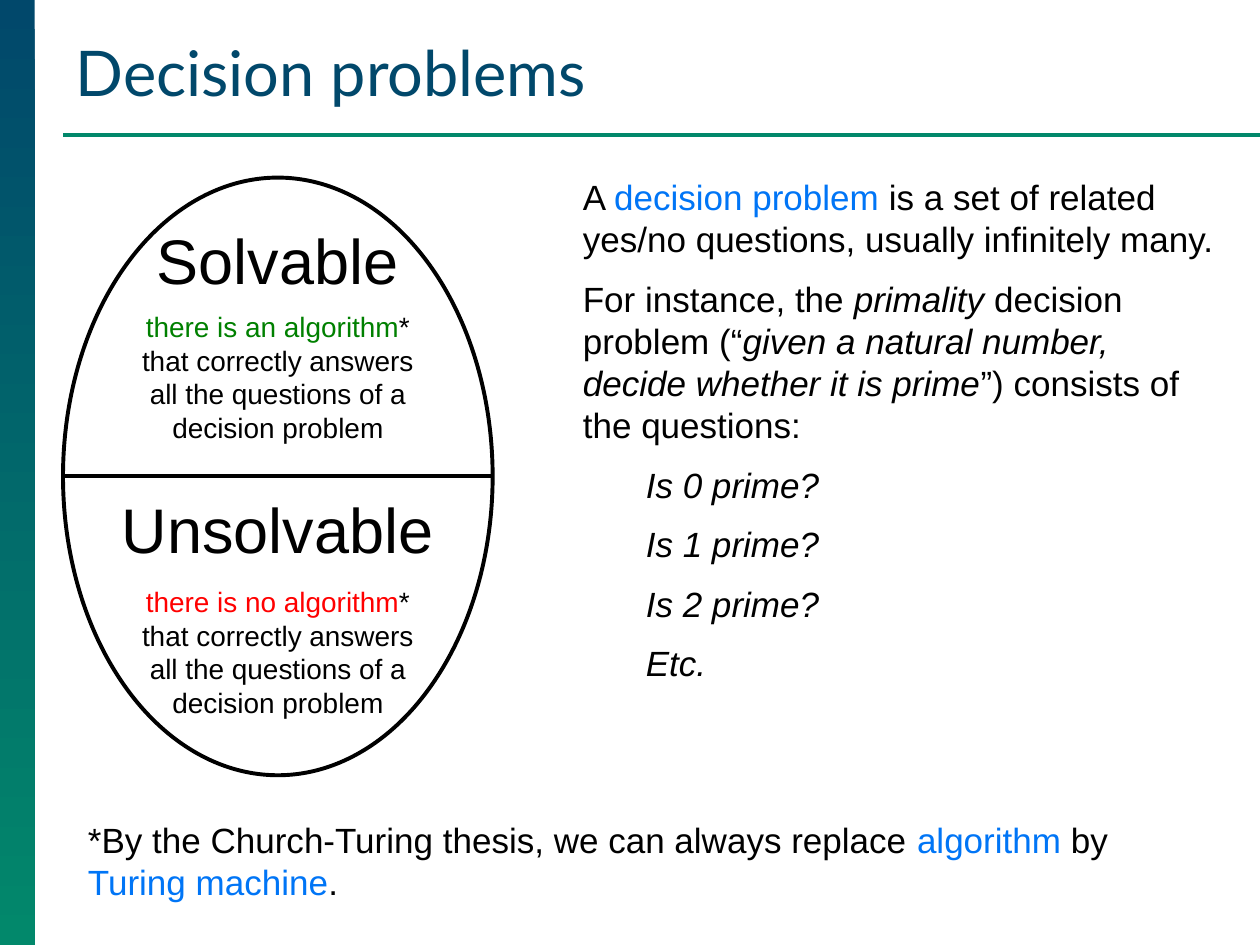
from dataclasses import dataclass

from lxml import etree
from pptx import Presentation
from pptx.dml.color import RGBColor
from pptx.enum.shapes import MSO_CONNECTOR, MSO_SHAPE
from pptx.enum.text import MSO_ANCHOR, MSO_AUTO_SIZE, PP_ALIGN
from pptx.oxml.ns import qn
from pptx.util import Pt

LEFT, CENTER = PP_ALIGN.LEFT, PP_ALIGN.CENTER
BOTTOM = MSO_ANCHOR.BOTTOM
NO_FIT, GROW = MSO_AUTO_SIZE.NONE, MSO_AUTO_SIZE.SHAPE_TO_FIT_TEXT
RECT, OVAL = MSO_SHAPE.RECTANGLE, MSO_SHAPE.OVAL
STRAIGHT = MSO_CONNECTOR.STRAIGHT
TITLE_ONLY = 5


@dataclass
class Theme:
    navy: str = "01486B"
    teal: str = "02886B"
    ink: str = "000000"
    term: str = "0075F6"
    yes: str = "008000"
    no: str = "FF0000"
    heading_font: str = "Lato"
    body_font: str = "Arial"
    heading: int = 36
    body: int = 20
    detail: int = 16
    stroke: float = 2.25
    indent: int = 36


class SlideBuilder:
    def __init__(self, prs, theme):
        self.theme = theme
        self.s = prs.slides.add_slide(prs.slide_layouts[TITLE_ONLY])

    def style(self, r, size, color, font=None, italic=False):
        r.font.name = font or self.theme.body_font
        r.font.size = Pt(size)
        r.font.italic = italic
        r.font.color.rgb = RGBColor.from_string(color)

    def title(self, text, x, y, w, h):
        sp = self.s.shapes.title
        sp.left, sp.top, sp.width, sp.height = Pt(x), Pt(y), Pt(w), Pt(h)
        tf = sp.text_frame
        tf.text = text
        tf.auto_size = NO_FIT
        tf.vertical_anchor = BOTTOM
        p = tf.paragraphs[0]
        p.alignment = LEFT
        self.style(p.runs[0], self.theme.heading, self.theme.navy,
                   self.theme.heading_font)

    def side_band(self, x, y, w, h):
        sp = self.s.shapes.add_shape(RECT, Pt(x), Pt(y), Pt(w), Pt(h))
        sp.shadow.inherit = False
        sp.line.fill.background()
        sp.fill.gradient()
        sp.fill.gradient_angle = 270
        colors = (self.theme.navy, self.theme.teal)
        for stop, position, color in zip(sp.fill.gradient_stops, (0, 1), colors):
            stop.position = position
            stop.color.rgb = RGBColor.from_string(color)

    def outline(self, line, color):
        line.color.rgb = RGBColor.from_string(color)
        line.width = Pt(self.theme.stroke)

    def oval(self, x, y, w, h):
        sp = self.s.shapes.add_shape(OVAL, Pt(x), Pt(y), Pt(w), Pt(h))
        sp.shadow.inherit = False
        sp.fill.background()
        self.outline(sp.line, self.theme.ink)

    def rule(self, x1, x2, y, color):
        line = self.s.shapes.add_connector(STRAIGHT, Pt(x1), Pt(y), Pt(x2), Pt(y))
        etree.SubElement(line._element.spPr, qn("a:effectLst"))
        self.outline(line.line, color)

    def text(self, paragraphs, x, y, w, h, size, align=LEFT, wrap=True):
        """Each paragraph is (level, runs); a run is (text, color, italic)."""
        tf = self.s.shapes.add_textbox(Pt(x), Pt(y), Pt(w), Pt(h)).text_frame
        tf.word_wrap = wrap
        tf.auto_size = GROW
        for i, (level, runs) in enumerate(paragraphs):
            p = tf.add_paragraph() if i else tf.paragraphs[0]
            p.alignment = align
            p.level = level
            if level:
                pPr = p._p.get_or_add_pPr()
                pPr.set("marL", str(Pt(self.theme.indent * level)))
                pPr.set("indent", "0")
            if i:
                p.space_before = Pt(size / 2)
            for words, color, italic in runs:
                r = p.add_run()
                r.text = words
                self.style(r, size, color, italic=italic)


def main():
    prs = Presentation()
    prs.slide_width, prs.slide_height = Pt(720), Pt(540)
    t = Theme()
    slide = SlideBuilder(prs, t)

    # Slide frame and title
    slide.side_band(0, 0, 19.8, 540)
    slide.rule(36, 720, 77, t.teal)
    slide.title("Decision problems", 36, 15, 668, 51)

    # Oval split into two halves
    x, y, w, h = 36, 101.5, 245.5, 341.5
    slide.oval(x, y, w, h)
    slide.rule(x, x + w, y + h / 2, t.ink)

    # Name and description of each half
    halves = [
        ("Solvable", 123, "there is an algorithm", t.yes, 173.5),
        ("Unsolvable", 276.5, "there is no algorithm", t.no, 330.5),
    ]
    name_w, detail_w = 194, 187
    middle = x + w / 2
    for name, name_y, claim, color, detail_y in halves:
        slide.text([(0, [(name, t.ink, False)])], middle - name_w / 2, name_y,
                   name_w, 51, t.heading, CENTER, wrap=False)
        runs = [(claim, color, False),
                ("* that correctly answers all the questions of a decision problem",
                 t.ink, False)]
        slide.text([(0, runs)], middle - detail_w / 2, detail_y,
                   detail_w, 85, t.detail, CENTER)

    # Definition and example
    definition = [
        ("A ", t.ink, False),
        ("decision problem ", t.term, False),
        ("is a set of related yes/no questions, usually infinitely many.",
         t.ink, False),
    ]
    example = [
        ("For instance, the ", t.ink, False),
        ("primality ", t.ink, True),
        ("decision problem (“", t.ink, False),
        ("given a natural number, decide whether it is prime", t.ink, True),
        ("”) consists of the questions:", t.ink, False),
    ]
    questions = [f"Is {n} prime?" for n in range(3)] + ["Etc."]
    paragraphs = [(0, definition), (0, example)]
    paragraphs += [(1, [(question, t.ink, True)]) for question in questions]
    slide.text(paragraphs, 326, 97, 379, 310, t.body)

    # Footnote
    footnote = [
        ("*By the Church-Turing thesis, we can always replace ", t.ink, False),
        ("algorithm", t.term, False),
        (" by ", t.ink, False),
        ("Turing machine", t.term, False),
        (".", t.ink, False),
    ]
    slide.text([(0, footnote)], 43.2, 464, 653, 55.5, t.body)

    prs.save("out.pptx")


if __name__ == "__main__":
    main()
